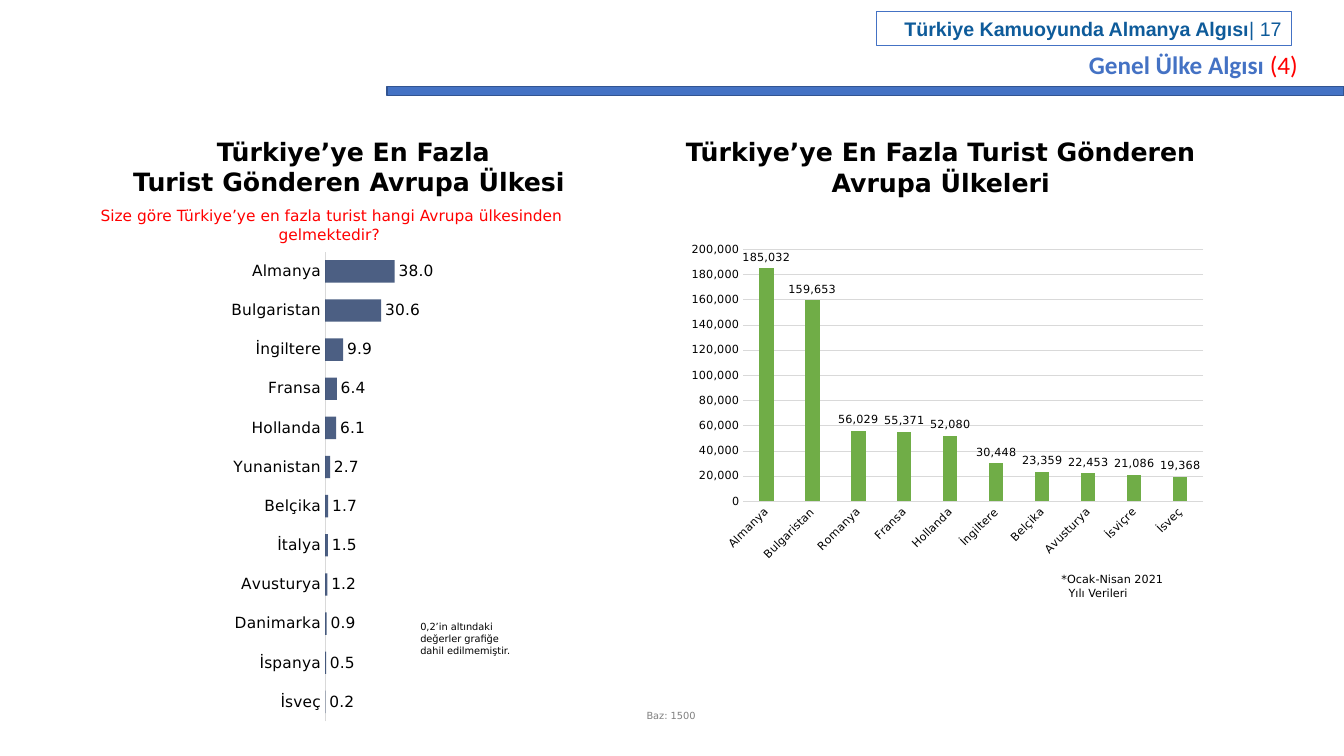
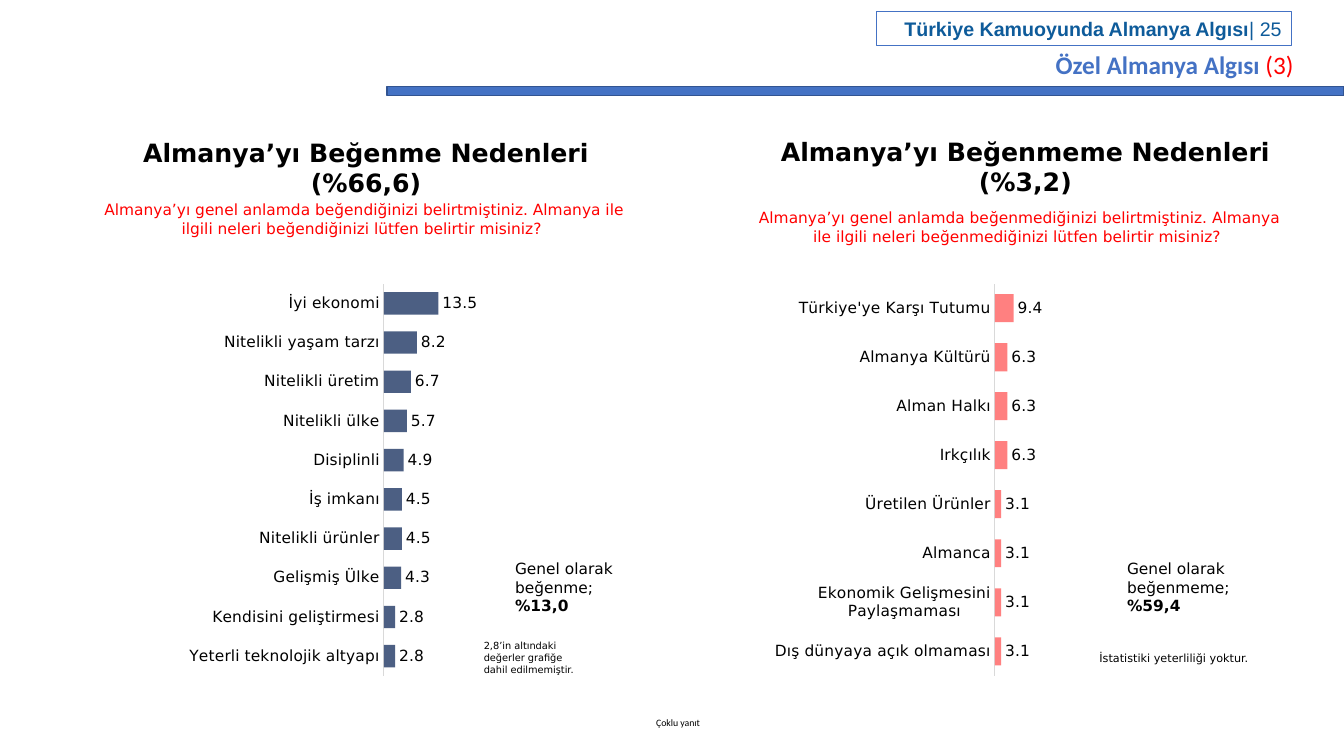
from dataclasses import dataclass

from lxml.etree import SubElement
from pptx import Presentation
from pptx.chart.data import CategoryChartData as ChartData
from pptx.dml.color import RGBColor as RGB
from pptx.enum.chart import XL_CHART_TYPE as ChartType
from pptx.enum.chart import XL_LABEL_POSITION as LabelPosition
from pptx.enum.chart import XL_TICK_MARK as TickMark
from pptx.enum.shapes import MSO_SHAPE as Shape
from pptx.enum.text import MSO_ANCHOR as Anchor
from pptx.enum.text import PP_ALIGN as Align
from pptx.oxml.ns import qn
from pptx.util import Inches, Pt


@dataclass(frozen=True)
class Theme:
    """Colours, fonts and type sizes of the deck."""
    blue: str = "4472C4"
    blue_edge: str = "325491"
    navy: str = "203864"
    coral: str = "FF6161"
    green: str = "70AD47"
    red: str = "FF0000"
    black: str = "000000"
    gray: str = "808080"
    rule: str = "D9D9D9"
    header_blue: str = "0E5B9A"
    body: str = "DejaVu Sans"
    title: str = "Calibri"
    header: str = "Arial"
    large: int = 18
    medium: int = 14
    normal: int = 11
    small: int = 8
    tiny: int = 7


THEME = Theme()


def font_style(color, size, name=THEME.body, bold=False):
    return {"color": color, "size": Pt(size), "name": name, "bold": bold}


STYLES = {
    "title": font_style(THEME.blue, THEME.large, THEME.title, True),
    "header": font_style(THEME.header_blue, THEME.medium, THEME.header, True),
    "heading": font_style(THEME.black, THEME.large, bold=True),
    "question": font_style(THEME.red, THEME.normal),
    "label": font_style(THEME.black, THEME.normal),
    "small": font_style(THEME.black, THEME.small),
    "note": font_style(THEME.black, THEME.tiny),
    "base": font_style(THEME.gray, THEME.tiny),
    "footer": font_style(THEME.black, THEME.tiny, THEME.title),
}


@dataclass(frozen=True)
class Box:
    """A rectangle in inches."""
    left: float
    top: float
    width: float
    height: float

    def inner(self, left, top, width, height):
        return Box(self.left + left, self.top + top, width, height)

    def lengths(self):
        return [Inches(v) for v in (self.left, self.top, self.width, self.height)]


# Text helpers
def apply_font(font, style):
    for name, value in style.items():
        if name == "color":
            font.color.rgb = RGB.from_string(value)
        else:
            setattr(font, name, value)


def write(frame, paragraphs, style, align=Align.LEFT, anchor=Anchor.TOP):
    """Each paragraph is a list of (text, changes to the style) runs."""
    frame.word_wrap = True
    frame.vertical_anchor = anchor
    for index, runs in enumerate(paragraphs):
        para = frame.paragraphs[0] if index == 0 else frame.add_paragraph()
        para.alignment = align
        for text, changes in runs:
            span = para.add_run()
            span.text = text
            apply_font(span.font, {**STYLES[style], **changes})


def add_text(slide, box, lines, style, align=Align.LEFT, anchor=Anchor.TOP):
    """Each line is a plain string or a list of runs."""
    frame = slide.shapes.add_textbox(*box.lengths()).text_frame
    paragraphs = [[(line, {})] if isinstance(line, str) else line for line in lines]
    write(frame, paragraphs, style, align, anchor)
    return frame


def add_rectangle(slide, box, line, width, fill=None):
    shape = slide.shapes.add_shape(Shape.RECTANGLE, *box.lengths())
    shape.shadow.inherit = False
    if fill:
        shape.fill.solid()
        shape.fill.fore_color.rgb = RGB.from_string(fill)
    else:
        shape.fill.background()
    shape.line.color.rgb = RGB.from_string(line)
    shape.line.width = Pt(width)
    return shape


# Chart helpers
def set_plot_layout(chart, fractions):
    area = chart._chartSpace.chart.plotArea
    for old in area.findall(qn("c:layout")):
        area.remove(old)
    layout = area.makeelement(qn("c:layout"))
    area.insert(0, layout)
    manual = SubElement(layout, qn("c:manualLayout"))
    settings = {"layoutTarget": "inner", "xMode": "edge", "yMode": "edge"}
    settings.update(zip("xywh", fractions))
    for name, value in settings.items():
        SubElement(manual, qn(f"c:{name}")).set("val", str(value))


def rule_line(line):
    line.color.rgb = RGB.from_string(THEME.rule)
    line.width = Pt(0.75)


def add_chart(slide, box, kind, values, color, style, layout, gap, number_format):
    data = ChartData(number_format=number_format)
    data.categories = list(values)
    data.add_series("Series 1", list(values.values()))
    chart = slide.shapes.add_chart(kind, *box.lengths(), data).chart
    chart.has_legend = chart.has_title = False
    apply_font(chart.font, STYLES[style])
    set_plot_layout(chart, layout)

    # Series and value labels
    plot = chart.plots[0]
    plot.gap_width = gap
    plot.vary_by_categories = False
    fill = plot.series[0].format.fill
    fill.solid()
    fill.fore_color.rgb = RGB.from_string(color)
    plot.has_data_labels = True
    labels = plot.data_labels
    options = {"show_value": True, "number_format": number_format,
               "number_format_is_linked": False, "position": LabelPosition.OUTSIDE_END}
    for name, value in options.items():
        setattr(labels, name, value)
    apply_font(labels.font, STYLES[style])

    # Axes
    for axis in (chart.category_axis, chart.value_axis):
        axis.major_tick_mark = axis.minor_tick_mark = TickMark.NONE
        axis.has_major_gridlines = False
        apply_font(axis.tick_labels.font, STYLES[style])
    rule_line(chart.category_axis.format.line)
    chart.value_axis.minimum_scale = 0
    return chart


def survey_bars(slide, box, values, color, maximum, layout):
    chart = add_chart(slide, box, ChartType.BAR_CLUSTERED, values, color, "label",
                      layout, 75, "###0.0")
    chart.category_axis.reverse_order = True
    chart.value_axis.maximum_scale = maximum
    chart.value_axis.visible = False
    tint = chart.plots[0].series[0]._element.find(".//" + qn("a:srgbClr"))
    SubElement(tint, qn("a:alpha")).set("val", "80000")


def visitor_columns(slide, box, values):
    chart = add_chart(slide, box, ChartType.COLUMN_CLUSTERED, values, THEME.green,
                      "small", (0.116, 0.038, 0.864, 0.76), 219, "#,##0")
    axis = chart.value_axis
    axis.maximum_scale, axis.major_unit = 200000, 20000
    axis.has_major_gridlines = True
    rule_line(axis.major_gridlines.format.line)
    axis.format.line.fill.background()
    axis.tick_labels.number_format = "#,##0"
    axis.tick_labels.number_format_is_linked = False
    body = chart.category_axis._element.find(".//" + qn("a:bodyPr"))
    body.set("rot", "-2700000")


# Page parts
def add_page(deck, title, number, page_number, title_box):
    slide = deck.slides.add_slide(deck.slide_layouts[5])
    add_rectangle(slide, Box(3.84, 0.86, 9.49, 0.09), THEME.blue_edge, 1, THEME.blue)
    header = add_rectangle(slide, Box(8.69, 0.11, 4.12, 0.34), THEME.blue, 0.75)
    write(header.text_frame, [[("Türkiye Kamuoyunda Almanya Algısı", {}),
                               (f"| {page_number}", {"bold": False})]],
          "header", Align.RIGHT, Anchor.MIDDLE)
    holder = slide.shapes.title
    holder.left, holder.top, holder.width, holder.height = title_box.lengths()
    write(holder.text_frame, [[(title + " ", {}),
                               (f"({number})", {"color": THEME.red, "bold": False})]],
          "title")
    return slide


def add_heading(slide, box, lines, anchor=Anchor.TOP):
    add_text(slide, box, lines, "heading", Align.CENTER, anchor)


def add_question(slide, box, text):
    add_text(slide, box, [text], "question", Align.CENTER)


def add_total(slide, box, label, share):
    add_text(slide, box, [[(label + " ", {}), (share, {"bold": True})]], "label")


def add_cutoff_note(slide, box, limit):
    add_text(slide, box, [f"{limit}’in altındaki değerler grafiğe dahil edilmemiştir."],
             "note")


# Regions
def guess_panel(slide, box):
    add_heading(slide, box.inner(0.16, 0, 5.75, 0.71),
                ["Türkiye’ye En Fazla", "Turist Gönderen Avrupa Ülkesi "])
    add_question(slide, box.inner(0, 0.7, 5.64, 0.47),
                 "Size göre Türkiye’ye en fazla turist hangi Avrupa ülkesinden gelmektedir? ")
    values = {"Almanya": 38, "Bulgaristan": 30.6, "İngiltere": 9.9, "Fransa": 6.4,
              "Hollanda": 6.1, "Yunanistan": 2.7, "Belçika": 1.7, "İtalya": 1.5,
              "Avusturya": 1.2, "Danimarka": 0.9, "İspanya": 0.5, "İsveç": 0.2}
    survey_bars(slide, box.inner(0.16, 1.15, 5.35, 4.81), values, THEME.navy, 100,
                (0.485, 0.01, 0.34, 0.969))
    add_cutoff_note(slide, box.inner(3.6, 4.81, 1.14, 0.45), "0,2")


def visitor_panel(slide, box):
    add_heading(slide, box.inner(0, 0, 5.28, 0.71),
                ["Türkiye’ye En Fazla Turist Gönderen Avrupa Ülkeleri"], Anchor.MIDDLE)
    values = {"Almanya": 185032, "Bulgaristan": 159653, "Romanya": 56029,
              "Fransa": 55371, "Hollanda": 52080, "İngiltere": 30448,
              "Belçika": 23359, "Avusturya": 22453, "İsviçre": 21086, "İsveç": 19368}
    visitor_columns(slide, box.inner(0.07, 1.05, 5.28, 3.29), values)
    period = add_text(slide, box.inner(3.74, 4.33, 1.6, 0.37),
                      ["*Ocak-Nisan 2021", "Yılı Verileri"], "small")
    period.paragraphs[1]._p.get_or_add_pPr().set("marL", str(Inches(0.07)))


def likes_panel(slide, box):
    add_heading(slide, box.inner(0, 0.01, 6.22, 0.71),
                ["Almanya’yı Beğenme Nedenleri", "(%66,6)"])
    add_question(slide, box.inner(0.36, 0.64, 5.47, 0.47),
                 "Almanya’yı genel anlamda beğendiğinizi belirtmiştiniz. Almanya ile "
                 "ilgili neleri beğendiğinizi lütfen belirtir misiniz? ")
    values = {"İyi ekonomi": 13.5, "Nitelikli yaşam tarzı": 8.2, "Nitelikli üretim": 6.7,
              "Nitelikli ülke": 5.7, "Disiplinli": 4.9, "İş imkanı": 4.5,
              "Nitelikli ürünler": 4.5, "Gelişmiş Ülke": 4.3,
              "Kendisini geliştirmesi": 2.8, "Yeterli teknolojik altyapı": 2.8}
    survey_bars(slide, box.inner(0.38, 1.51, 5.85, 4.02), values, THEME.navy, 50,
                (0.497, 0, 0.343, 0.969))
    add_total(slide, box.inner(4.49, 4.2, 1.26, 0.66), "Genel olarak beğenme;", "%13,0")
    add_cutoff_note(slide, box.inner(4.18, 5, 1.14, 0.45), "2,8")


def dislikes_panel(slide, box):
    add_heading(slide, box.inner(0, 0, 6.22, 0.71),
                ["Almanya’yı Beğenmeme Nedenleri", "(%3,2)"])
    add_question(slide, box.inner(0.32, 0.72, 5.47, 0.47),
                 "Almanya’yı genel anlamda beğenmediğinizi belirtmiştiniz. Almanya "
                 "ile ilgili neleri beğenmediğinizi lütfen belirtir misiniz? ")
    values = {"Türkiye'ye Karşı Tutumu": 9.4, "Almanya Kültürü": 6.3, "Alman Halkı": 6.3,
              "Irkçılık": 6.3, "Üretilen Ürünler": 3.1, "Almanca": 3.1,
              "Ekonomik Gelişmesini Paylaşmaması": 3.1, "Dış dünyaya açık olmaması": 3.1}
    survey_bars(slide, box.inner(0, 1.51, 5.79, 4.02), values, THEME.coral, 100,
                (0.485, 0, 0.343, 0.969))
    add_total(slide, box.inner(4.02, 4.2, 1.43, 0.66), "Genel olarak beğenmeme;", "%59,4")
    add_text(slide, box.inner(3.72, 5.11, 1.73, 0.24), ["İstatistiki yeterliliği yoktur."],
             "small", Align.CENTER, Anchor.MIDDLE)


def main():
    deck = Presentation()
    deck.slide_width, deck.slide_height = Inches(13.33), Inches(7.5)

    # Tourist origin: opinion and figures
    page = add_page(deck, "Genel Ülke Algısı", 4, 17, Box(10.7, 0.44, 2.29, 0.4))
    guess_panel(page, Box(0.47, 1.3, 5.91, 5.96))
    visitor_panel(page, Box(6.69, 1.3, 5.35, 4.7))
    add_text(page, Box(6.25, 6.99, 0.81, 0.22), ["Baz: 1500"], "base", Align.CENTER)

    # Reasons for liking and disliking
    page = add_page(deck, "Özel Almanya Algısı", 3, 25, Box(10.37, 0.44, 2.61, 0.4))
    likes_panel(page, Box(0.52, 1.3, 6.23, 5.53))
    dislikes_panel(page, Box(7.06, 1.3, 6.22, 5.53))
    add_text(page, Box(6.27, 7.06, 0.91, 0.22), ["Çoklu yanıt"], "footer", Align.CENTER)

    deck.save("out.pptx")


if __name__ == "__main__":
    main()
